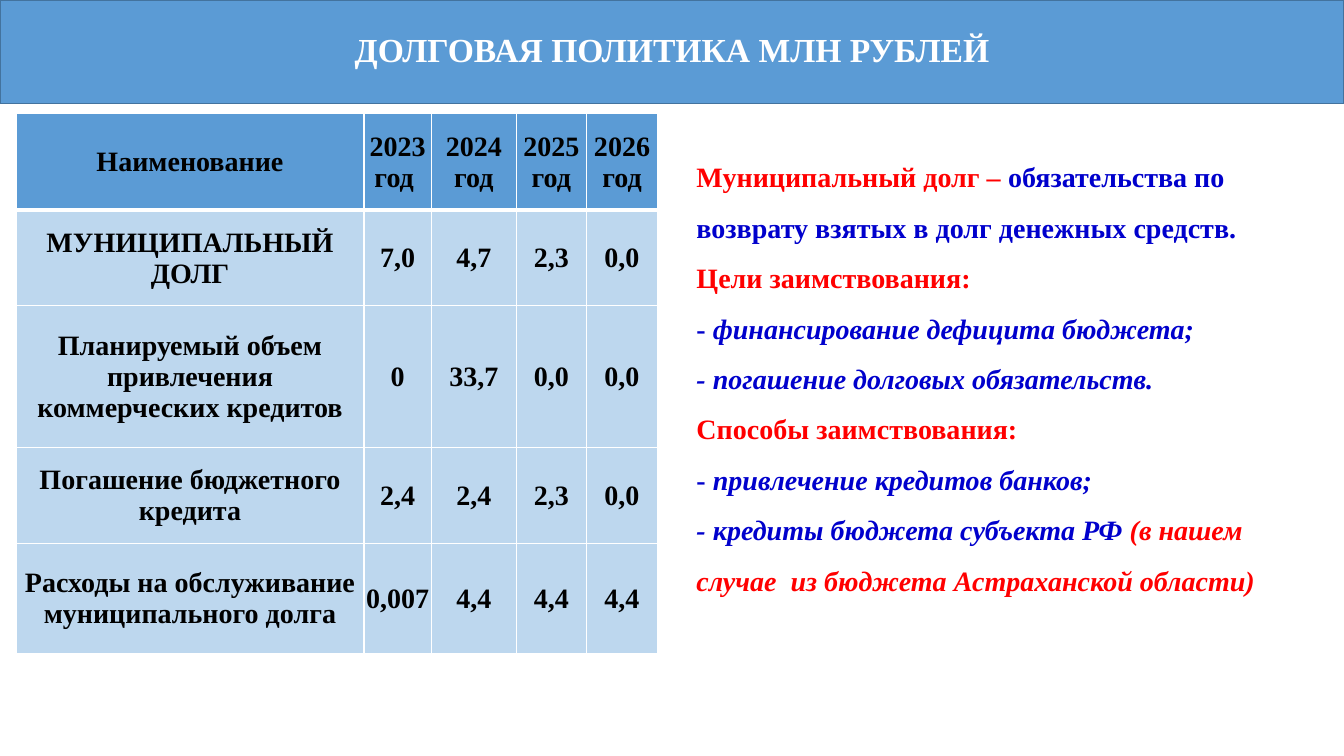
from lxml import etree
from pptx import Presentation
from pptx.dml.color import RGBColor
from pptx.enum.shapes import MSO_SHAPE
from pptx.enum.text import MSO_ANCHOR, MSO_AUTO_SIZE, PP_ALIGN
from pptx.oxml.ns import qn
from pptx.util import Inches, Pt

CENTER, MIDDLE = PP_ALIGN.CENTER, MSO_ANCHOR.MIDDLE
FONT = "Times New Roman"
COLORS = {
    "header": "5B9BD5", "body": "BDD7EE", "outline": "43739E", "white": "FFFFFF",
    "black": "000000", "red": "FF0000", "blue": "0000CC",
}

TITLE = "ДОЛГОВАЯ ПОЛИТИКА МЛН РУБЛЕЙ"
DEBT_ROWS = [
    ("Наименование", "2023 год ", "2024 год", "2025 год", "2026 год"),
    ("МУНИЦИПАЛЬНЫЙ ДОЛГ", "7,0", "4,7", "2,3", "0,0"),
    ("Планируемый объем привлечения коммерческих кредитов", "0", "33,7", "0,0", "0,0"),
    ("Погашение бюджетного кредита", "2,4", "2,4", "2,3", "0,0"),
    ("Расходы на обслуживание муниципального долга", "0,007", "4,4", "4,4", "4,4"),
]
COLUMN_WIDTHS = [3.45, 0.67, 0.84, 0.7, 0.7]
ROW_HEIGHTS = [0.95, 0.95, 1.41, 0.95, 1.09]

# Each paragraph is a list of runs: text, color, italic
EXPLANATION = [
    [("Муниципальный долг – ", "red", False),
     ("обязательства по возврату взятых в долг денежных средств.", "blue", False)],
    [("Цели заимствования:", "red", False)],
    [("- ", "blue", False), ("финансирование дефицита бюджета;", "blue", True)],
    [("- погашение долговых обязательств.", "blue", True)],
    [("Способы заимствования:", "red", False)],
    [("- ", "blue", False), ("привлечение кредитов банков;", "blue", True)],
    [("- кредиты бюджета субъекта РФ ", "blue", True),
     ("(в нашем случае  из бюджета Астраханской области)", "red", True)],
]


def color(name):
    return RGBColor.from_string(COLORS[name])


def add_run(paragraph, text, color_name, size=20, italic=False):
    run = paragraph.add_run()
    run.text = text
    font = run.font
    font.name, font.size, font.bold, font.italic = FONT, Pt(size), True, italic
    font.color.rgb = color(color_name)


def add_border(cell, side, points):
    properties = cell._tc.get_or_add_tcPr()
    line = etree.SubElement(properties, qn(f"a:ln{side}"), w=str(Pt(points)))
    fill = etree.SubElement(line, qn("a:solidFill"))
    etree.SubElement(fill, qn("a:srgbClr"), val=COLORS["white"])


def add_title(slide):
    banner = slide.shapes.add_shape(MSO_SHAPE.RECTANGLE, 0, 0, Inches(13.33), Inches(1.03))
    banner.shadow.inherit = False
    banner.fill.solid()
    banner.fill.fore_color.rgb = color("header")
    banner.line.color.rgb = color("outline")
    banner.line.width = Pt(1)
    banner.text_frame.word_wrap = True
    banner.text_frame.vertical_anchor = MIDDLE
    paragraph = banner.text_frame.paragraphs[0]
    paragraph.alignment = CENTER
    paragraph.line_spacing = 0.9
    add_run(paragraph, TITLE, "white", size=24)


def fill_cell(cell, text, row_index):
    """Border widths follow the row: a thick line divides header and body."""
    top = 3 if row_index == 1 else 1
    bottom = 3 if row_index == 0 else 1
    for side, points in (("L", 1), ("R", 1), ("T", top), ("B", bottom)):
        add_border(cell, side, points)
    cell.fill.solid()
    cell.fill.fore_color.rgb = color("body" if row_index else "header")
    cell.vertical_anchor = MIDDLE
    cell.margin_left = cell.margin_right = cell.margin_top = Inches(0.01)
    cell.margin_bottom = 0
    paragraph = cell.text_frame.paragraphs[0]
    paragraph.alignment = CENTER
    add_run(paragraph, text, "black")


def add_debt_table(slide):
    table = slide.shapes.add_table(
        len(ROW_HEIGHTS), len(COLUMN_WIDTHS), Inches(0.16), Inches(1.13),
        Inches(sum(COLUMN_WIDTHS)), Inches(sum(ROW_HEIGHTS))).table
    for column, width in zip(table.columns, COLUMN_WIDTHS):
        column.width = Inches(width)
    for row_index, (row, height) in enumerate(zip(table.rows, ROW_HEIGHTS)):
        row.height = Inches(height)
        for cell, text in zip(row.cells, DEBT_ROWS[row_index]):
            fill_cell(cell, text, row_index)


def add_explanation(slide):
    box = slide.shapes.add_textbox(Inches(6.81), Inches(1.37), Inches(5.83), Inches(4.58))
    frame = box.text_frame
    frame.word_wrap = True
    frame.auto_size = MSO_AUTO_SIZE.SHAPE_TO_FIT_TEXT
    for index, runs in enumerate(EXPLANATION):
        paragraph = frame.add_paragraph() if index else frame.paragraphs[0]
        paragraph.line_spacing = 1.5
        for text, color_name, italic in runs:
            add_run(paragraph, text, color_name, italic=italic)


def main():
    presentation = Presentation()
    presentation.slide_width, presentation.slide_height = Inches(13.33), Inches(7.5)
    slide = presentation.slides.add_slide(presentation.slide_layouts[6])
    add_debt_table(slide)
    add_title(slide)
    add_explanation(slide)
    presentation.save("out.pptx")


if __name__ == "__main__":
    main()
